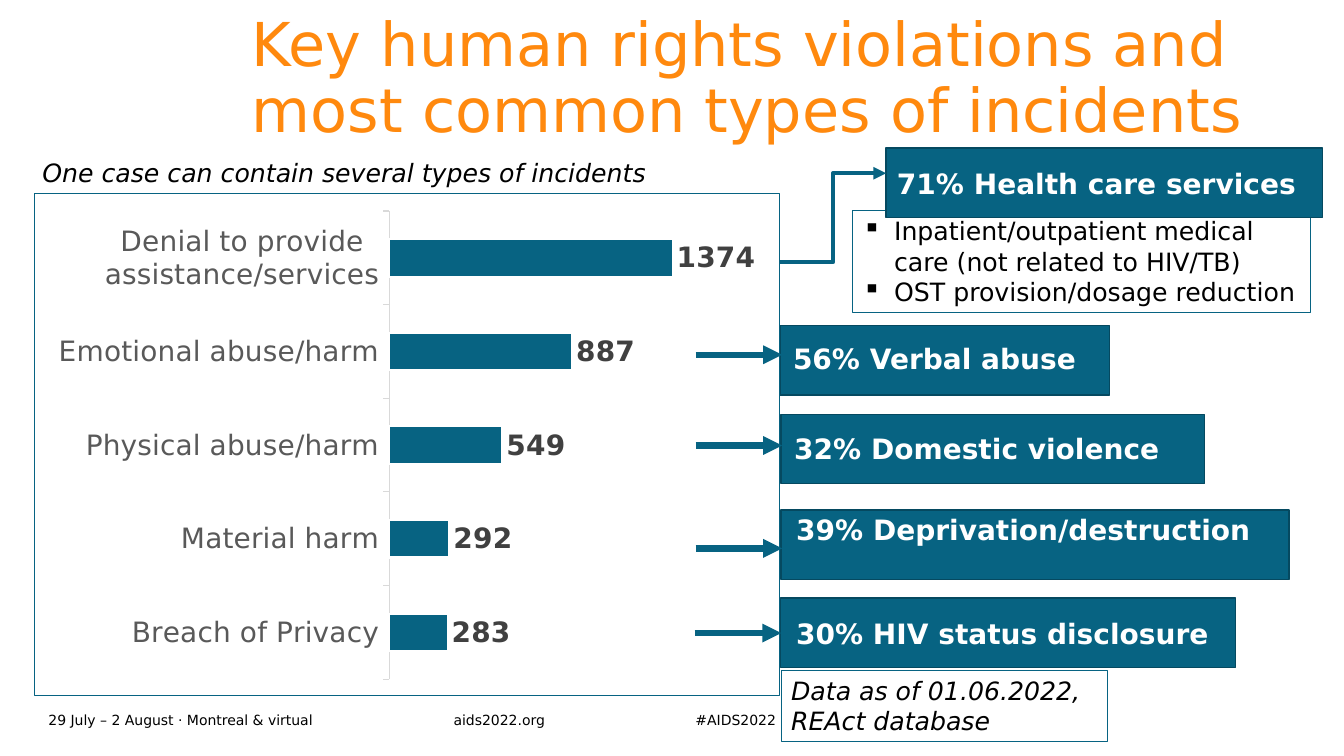
from pptx import Presentation
from pptx.chart.data import CategoryChartData
from pptx.dml.color import RGBColor
from pptx.enum.chart import XL_CHART_TYPE, XL_LABEL_POSITION, XL_TICK_MARK
from pptx.enum.shapes import MSO_CONNECTOR, MSO_SHAPE
from pptx.enum.text import MSO_ANCHOR, PP_ALIGN
from pptx.oxml import parse_xml
from pptx.oxml.ns import nsdecls, qn
from pptx.util import Pt

HUES = {"teal": "076382", "edge": "054960", "title": "FF890E", "black": "000000",
        "white": "FFFFFF", "label": "595959", "value": "404040", "axis": "D9D9D9"}
FACE = "DejaVu Sans"
STYLES = {
    "title": {"size": Pt(43.2)},
    "foot": {"size": Pt(10)},
    "body": {"size": Pt(18)},
    "note": {"size": Pt(18), "italic": True},
    "card": {"size": Pt(20), "bold": True},
    "axis": {"size": Pt(20), "bold": False},
}


class Deck:
    def __init__(self, wide, high):
        self.show = Presentation()
        self.show.slide_width, self.show.slide_height = Pt(wide), Pt(high)
        self.slide = self.show.slides.add_slide(self.show.slide_layouts[6])
        self.items = self.slide.shapes

    def hue(self, name):
        return RGBColor.from_string(HUES[name])

    def font(self, font, style, hue):
        for key, value in {"name": FACE, **STYLES[style]}.items():
            setattr(font, key, value)
        font.color.rgb = self.hue(hue)

    def line(self, line, hue, width):
        line.color.rgb = self.hue(hue)
        line.width = Pt(width)

    def label(self, shape, lines, style, hue="black", bullet=None, space=None, **frame):
        text = shape.text_frame
        for key, value in {"word_wrap": True, "vertical_anchor": MSO_ANCHOR.TOP, **frame}.items():
            setattr(text, key, value)
        for i, words in enumerate(lines):
            para = text.add_paragraph() if i else text.paragraphs[0]
            para.alignment = PP_ALIGN.LEFT
            if space:
                para.line_spacing = space
            if bullet:
                props = para._p.get_or_add_pPr()
                props.set("marL", str(Pt(22.5)))
                props.set("indent", str(-Pt(22.5)))
                props.append(parse_xml(f'<a:buChar {nsdecls("a")} char="{bullet}"/>'))
            for j, part in enumerate(words.split("\n")):
                if j:
                    para.add_line_break()
                run = para.add_run()
                run.text = part
                self.font(run.font, style, hue)
        return text

    def text(self, place, lines, style, hue="black", home=None, **frame):
        box = (home or self.items).add_textbox(*map(Pt, place))
        return self.label(box, lines, style, hue, **frame)

    def bare(self, place, lines, style, hue="black", **frame):
        edges = {f"margin_{side}": 0 for side in ("left", "top", "right", "bottom")}
        return self.text(place, lines, style, hue, **edges, **frame)

    def rect(self, place, edge, width, fill=None, home=None):
        box = (home or self.items).add_shape(MSO_SHAPE.RECTANGLE, *map(Pt, place))
        box.shadow.inherit = False
        if fill:
            box.fill.solid()
            box.fill.fore_color.rgb = self.hue(fill)
        else:
            box.fill.background()
        self.line(box.line, edge, width)
        return box

    def card(self, place, start, words):
        group = self.items.add_group_shape().shapes
        left, top, wide, high = place
        self.rect(place, "edge", 1, "teal", group)
        self.text((*start, left + wide - start[0], 31.7), [words], "card", "white", group)

    def arrow(self, kind, ends, width):
        link = self.items.add_connector(kind, *map(Pt, ends))
        self.line(link.line, "teal", width)
        props = link._element.spPr
        props.find(qn("a:ln")).append(parse_xml(f'<a:tailEnd {nsdecls("a")} type="triangle"/>'))
        props.append(parse_xml(f'<a:effectLst {nsdecls("a")}/>'))

    def chart(self, place, pairs, plot):
        data = CategoryChartData()
        data.categories = [name for name, _ in pairs]
        data.add_series("Series 1", [value for _, value in pairs])
        chart = self.items.add_chart(XL_CHART_TYPE.BAR_CLUSTERED, *map(Pt, place), data).chart
        for key, value in {"has_title": False, "has_legend": False}.items():
            setattr(chart, key, value)
        self.font(chart.font, "foot", "black")

        scale = chart.value_axis
        for key, value in {"minimum_scale": 0, "maximum_scale": 1600,
                           "has_major_gridlines": False, "visible": False}.items():
            setattr(scale, key, value)
        names = chart.category_axis
        names.major_tick_mark = XL_TICK_MARK.OUTSIDE
        names.has_major_gridlines = False
        self.line(names.format.line, "axis", 0.75)
        self.font(names.tick_labels.font, "axis", "label")

        bars = chart.plots[0]
        for key, value in {"gap_width": 150, "vary_by_categories": False,
                           "has_data_labels": True}.items():
            setattr(bars, key, value)
        labels = bars.data_labels
        labels.show_value = True
        labels.position = XL_LABEL_POSITION.OUTSIDE_END
        self.font(labels.font, "card", "value")
        look = bars.series[0].format
        look.fill.solid()
        look.fill.fore_color.rgb = self.hue("teal")
        self.line(look.line, "white", 1.5)

        root = chart._chartSpace.find(qn("c:chart"))
        area = root.find(qn("c:plotArea"))
        for old in area.findall(qn("c:layout")):
            area.remove(old)
        spots = "".join(f'<c:{key} val="{value}"/>' for key, value in plot.items())
        area.insert(0, parse_xml(
            f'<c:layout {nsdecls("c")}><c:manualLayout><c:layoutTarget val="inner"/>'
            f'<c:xMode val="edge"/><c:yMode val="edge"/>{spots}</c:manualLayout></c:layout>'))
        root.addnext(parse_xml(
            f'<c:spPr {nsdecls("c", "a")}><a:noFill/><a:ln w="{Pt(0.75)}"><a:solidFill>'
            f'<a:srgbClr val="{HUES["teal"]}"/></a:solidFill></a:ln></c:spPr>'))


def main():
    deck = Deck(960, 540)
    for left, wide, words in [(34.6, 289, "29 July – 2 August · Montreal & virtual"),
                              (324, 139, "aids2022.org"), (496.8, 139, "#AIDS2022")]:
        deck.bare((left, 505.4, wide, 17.3), [words], "foot", vertical_anchor=MSO_ANCHOR.MIDDLE)

    deck.bare((180, 7.2, 776, 96.5),
              ["Key human rights violations and\nmost common types of incidents"],
              "title", "title", space=0.9, vertical_anchor=MSO_ANCHOR.BOTTOM)
    hint = deck.text((0, 108.7, 468.7, 28.8),
                     ["One case can contain several types of incidents"], "note")
    hint.paragraphs[0].alignment = PP_ALIGN.RIGHT

    care = deck.rect((609.1, 150.5, 326.9, 72.7), "teal", 0.75)
    deck.label(care, ["Inpatient/outpatient medical care (not related to HIV/TB)",
                      "OST provision/dosage reduction"], "body", bullet="▪")

    for left, top, wide, start, words in [
            (632.9, 105.8, 311.8, (633.6, 115.2), "71% Health care services"),
            (557.3, 232.6, 235.4, (559.4, 240.5), "56% Verbal abuse"),
            (558, 295.9, 302.4, (560.2, 304.6), "32% Domestic violence"),
            (558, 364.3, 362.9, (561.6, 362.2), "39% Deprivation/destruction"),
            (557.3, 427, 325.4, (561.6, 437), "30% HIV status disclosure")]:
        deck.card((left, top, wide, 49.7), start, words)

    deck.chart((24.5, 138.2, 532.8, 359.3),
               [("Breach of Privacy", 283), ("Material harm", 292),
                ("Physical abuse/harm", 549), ("Emotional abuse/harm", 887),
                ("Denial to provide assistance/services", 1374)],
               {"x": 0.476, "y": 0.034, "w": 0.443, "h": 0.933})

    deck.arrow(MSO_CONNECTOR.ELBOW, (557.3, 187.2, 632.9, 123.8), 3)
    for left, top in [(496.8, 253.4), (496.8, 318.2), (496.8, 391.7), (496.1, 452.2)]:
        deck.arrow(MSO_CONNECTOR.STRAIGHT, (left, top, left + 61.9, top), 4.5)

    date = deck.rect((558, 478.8, 233.3, 51.1), "teal", 0.75)
    deck.label(date, ["Data as of 01.06.2022,", "REAct database"], "note", word_wrap=False)
    deck.show.save("out.pptx")


if __name__ == "__main__":
    main()
